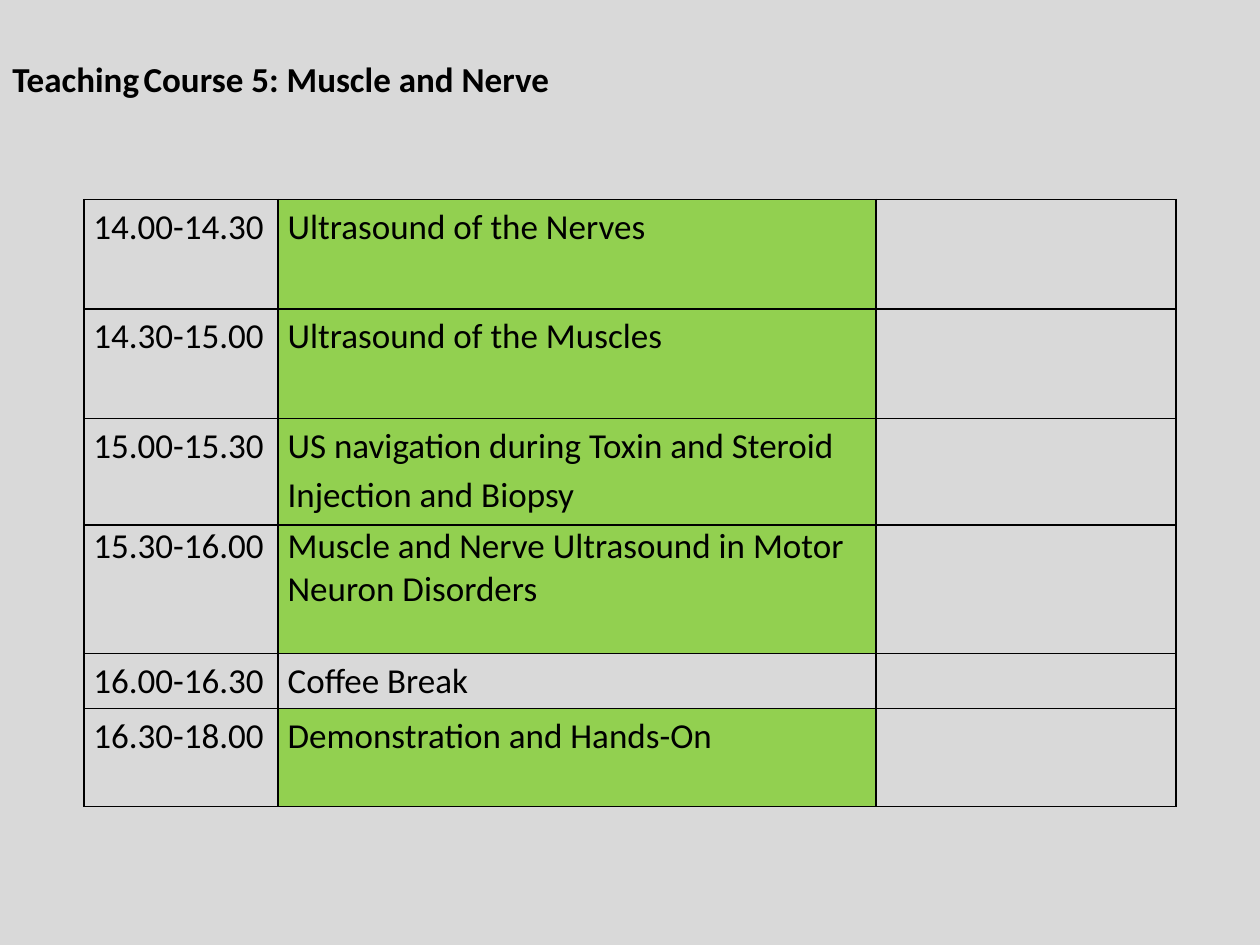
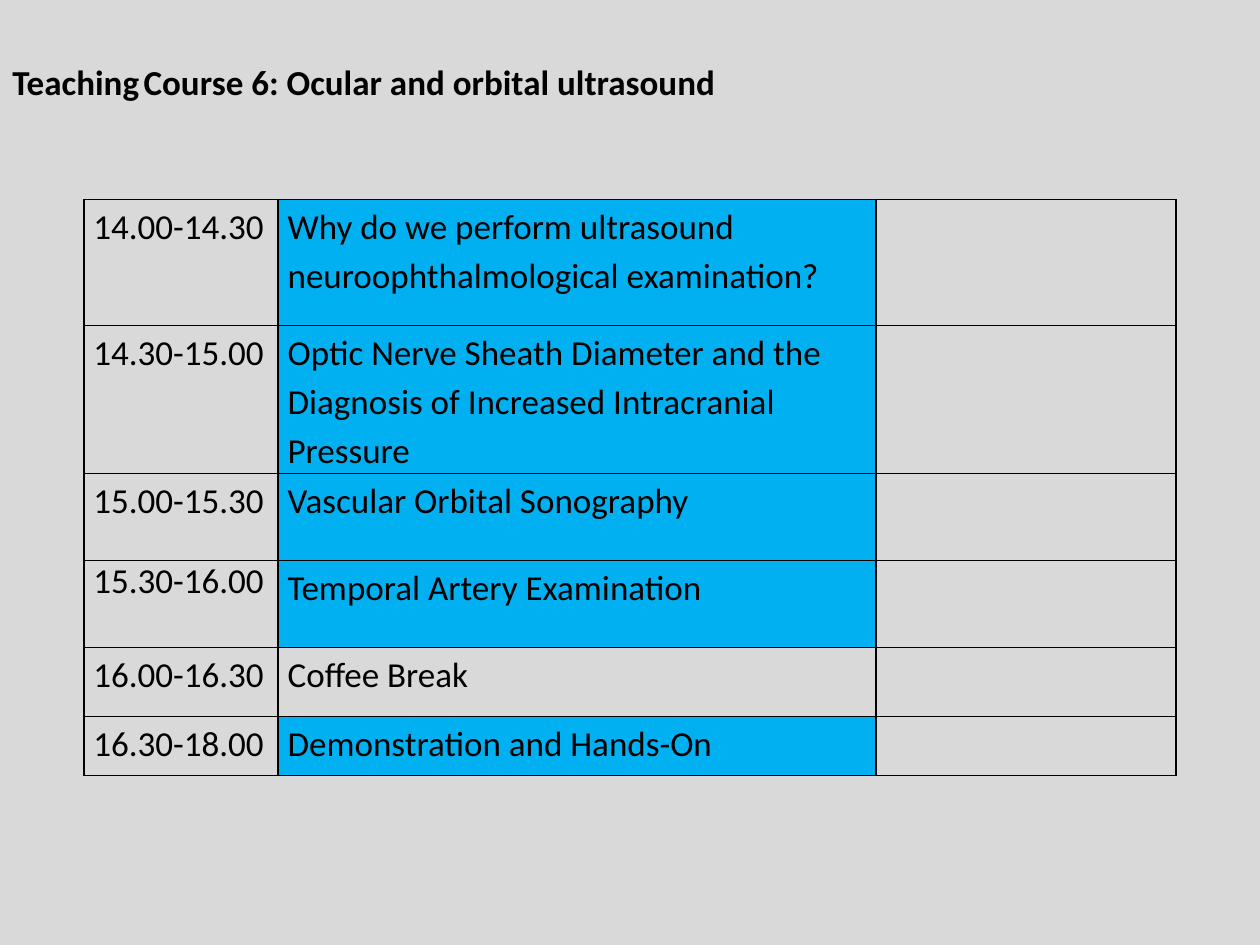
from dataclasses import dataclass

from lxml import etree
from pptx import Presentation
from pptx.dml.color import RGBColor
from pptx.enum.text import MSO_ANCHOR, MSO_AUTO_SIZE
from pptx.oxml.ns import qn
from pptx.util import Pt

MIDDLE = MSO_ANCHOR.MIDDLE
GROW = MSO_AUTO_SIZE.SHAPE_TO_FIT_TEXT


@dataclass(frozen=True)
class Theme:
    font: str = "Calibri"
    back: str = "D9D9D9"
    ink: str = "000000"
    green: str = "92D050"
    blue: str = "00B0F0"
    size: float = 20
    small: float = 11
    line: float = 1
    pad: float = 5.4
    loose: float = 1.15


THEME = Theme()
WIDE, HIGH = 720, 540
COLS = (111, 341.6, 171.4)
TIMES = ("14.00-14.30", "14.30-15.00", "15.00-15.30",
         "15.30-16.00", "16.00-16.30", "16.30-18.00")
BREAK = "Coffee Break"
HANDS = "Demonstration and Hands-On"
GRID = (48, 114, sum(COLS))
COURSES = (
    dict(
        name="Course 5: Muscle and Nerve",
        box=(0, 28.8, 600, 31.7),
        lead=1.0,
        tint=THEME.green,
        talks=("Ultrasound of the Nerves",
               "Ultrasound of the Muscles",
               "US navigation during Toxin and Steroid Injection and Biopsy",
               "Muscle and Nerve Ultrasound in Motor Neuron Disorders",
               BREAK, HANDS),
        rows=(62.6, 62.6, 60.9, 73.5, 31.2, 56.2),
        tight={(3, 0), (3, 1)},
    ),
    dict(
        name="Course 6: Ocular and orbital ultrasound",
        box=(0, 28.1, 600, 33.8),
        lead=THEME.loose,
        tint=THEME.blue,
        talks=("Why do we perform ultrasound neuroophthalmological examination?",
               "Optic Nerve Sheath Diameter and the Diagnosis of "
               "Increased Intracranial Pressure",
               "Vascular Orbital Sonography",
               "Temporal Artery Examination",
               BREAK, HANDS),
        rows=(72, 84.5, 49.8, 49.8, 39.5, 33.7),
        tight={(3, 0)},
    ),
)


def write(para, text, size=THEME.size, bold=False, lead=1.0):
    para.line_spacing = lead
    run = para.add_run()
    run.text = text
    font = run.font
    font.name, font.size, font.bold = THEME.font, Pt(size), bold
    font.color.rgb = RGBColor.from_string(THEME.ink)


def edge(cell):
    props = cell._tc.get_or_add_tcPr()
    for side in ("a:lnL", "a:lnR", "a:lnT", "a:lnB"):
        line = etree.SubElement(props, qn(side), w=str(Pt(THEME.line)))
        fill = etree.SubElement(line, qn("a:solidFill"))
        etree.SubElement(fill, qn("a:srgbClr"), val=THEME.ink)


def paint(fill, tint):
    if tint:
        fill.solid()
        fill.fore_color.rgb = RGBColor.from_string(tint)
    else:
        fill.background()


def head(slide, box, name, lead):
    frame = slide.shapes.add_textbox(*map(Pt, box)).text_frame
    frame.word_wrap = True
    frame.auto_size = GROW
    frame.vertical_anchor = MIDDLE
    para = frame.paragraphs[0]
    write(para, "Teaching", bold=True, lead=lead)
    write(para, " ", size=THEME.small, lead=lead)
    write(para, name, bold=True, lead=lead)


def plan(slide, box, talks, rows, tint, tight):
    table = slide.shapes.add_table(len(rows), len(COLS), *map(Pt, box)).table
    table.first_row = table.horz_banding = False
    for col, width in zip(table.columns, COLS):
        col.width = Pt(width)
    for r, (time, talk, tall) in enumerate(zip(TIMES, talks, rows)):
        table.rows[r].height = Pt(tall)
        for c, text in enumerate((time, talk, "")):
            cell = table.cell(r, c)
            edge(cell)
            paint(cell.fill, tint if c == 1 and talk != BREAK else None)
            if text:
                cell.margin_left = cell.margin_right = Pt(THEME.pad)
                cell.margin_top = cell.margin_bottom = 0
                lead = 1.0 if (r, c) in tight else THEME.loose
                write(cell.text_frame.paragraphs[0], text, lead=lead)


def course(deck, name, box, lead, tint, talks, rows, tight):
    slide = deck.slides.add_slide(deck.slide_layouts[6])
    paint(slide.background.fill, THEME.back)
    plan(slide, (*GRID, sum(rows)), talks, rows, tint, tight)
    head(slide, box, name, lead)


def main():
    deck = Presentation()
    deck.slide_width, deck.slide_height = Pt(WIDE), Pt(HIGH)
    for item in COURSES:
        course(deck, **item)
    deck.save("out.pptx")


if __name__ == "__main__":
    main()
